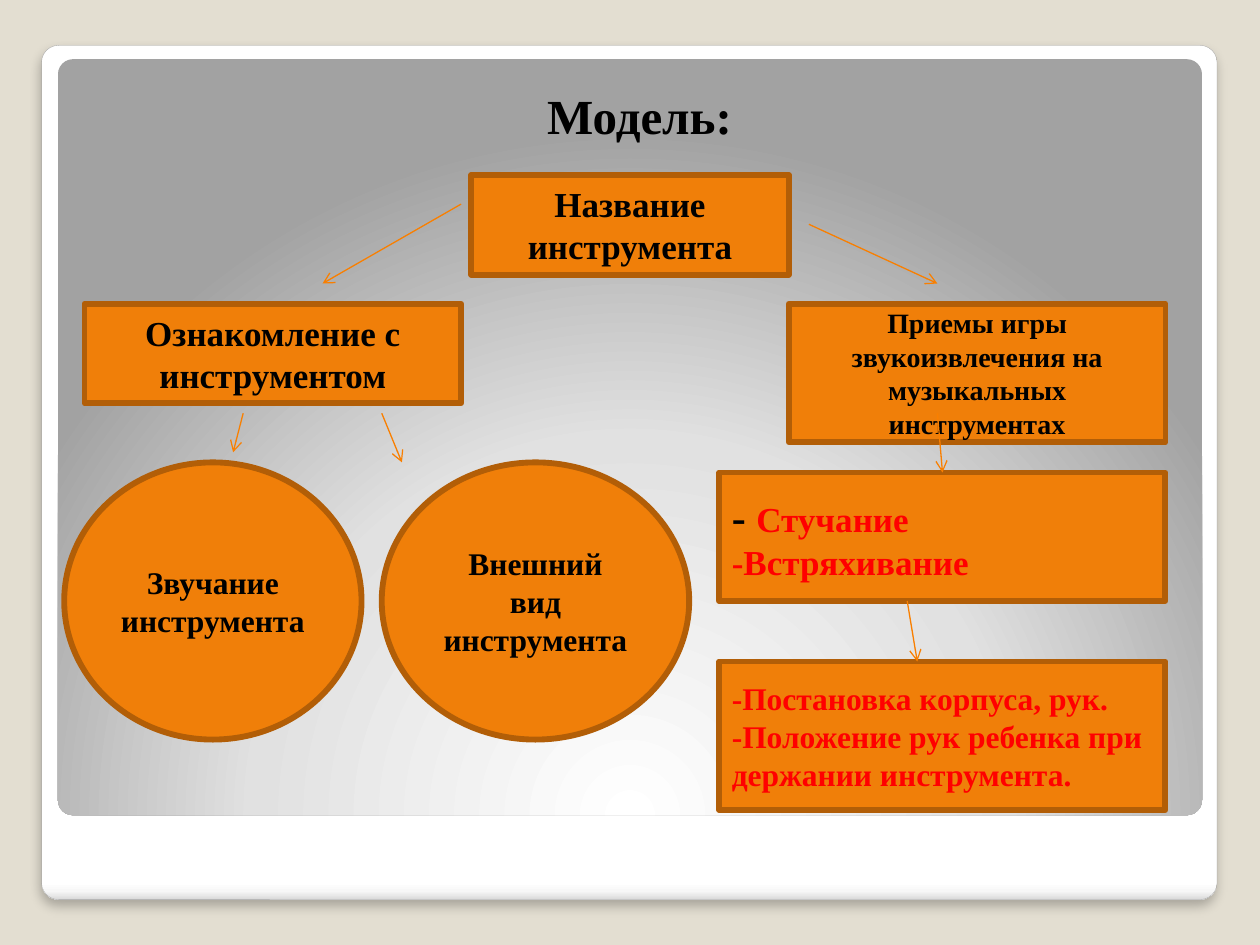
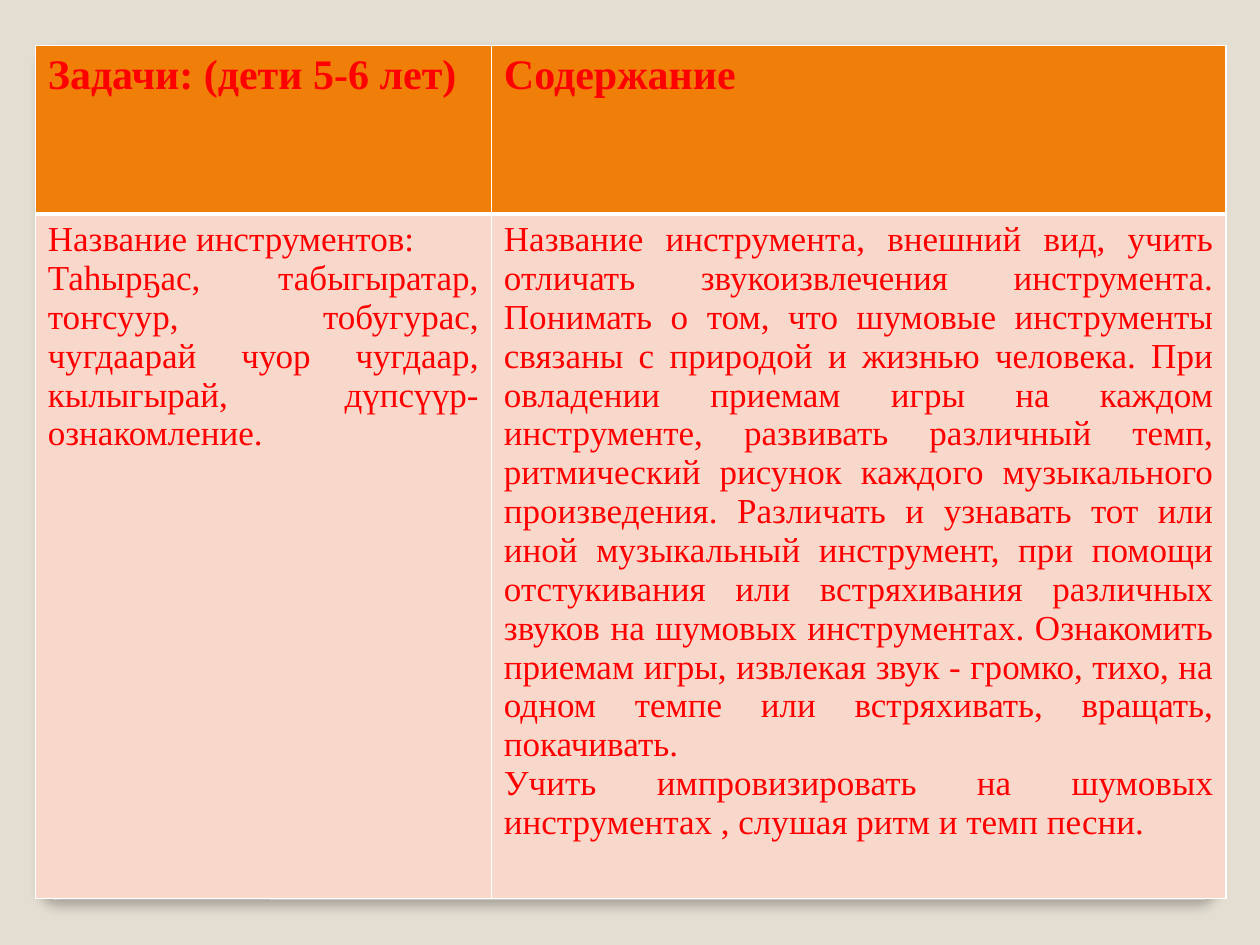
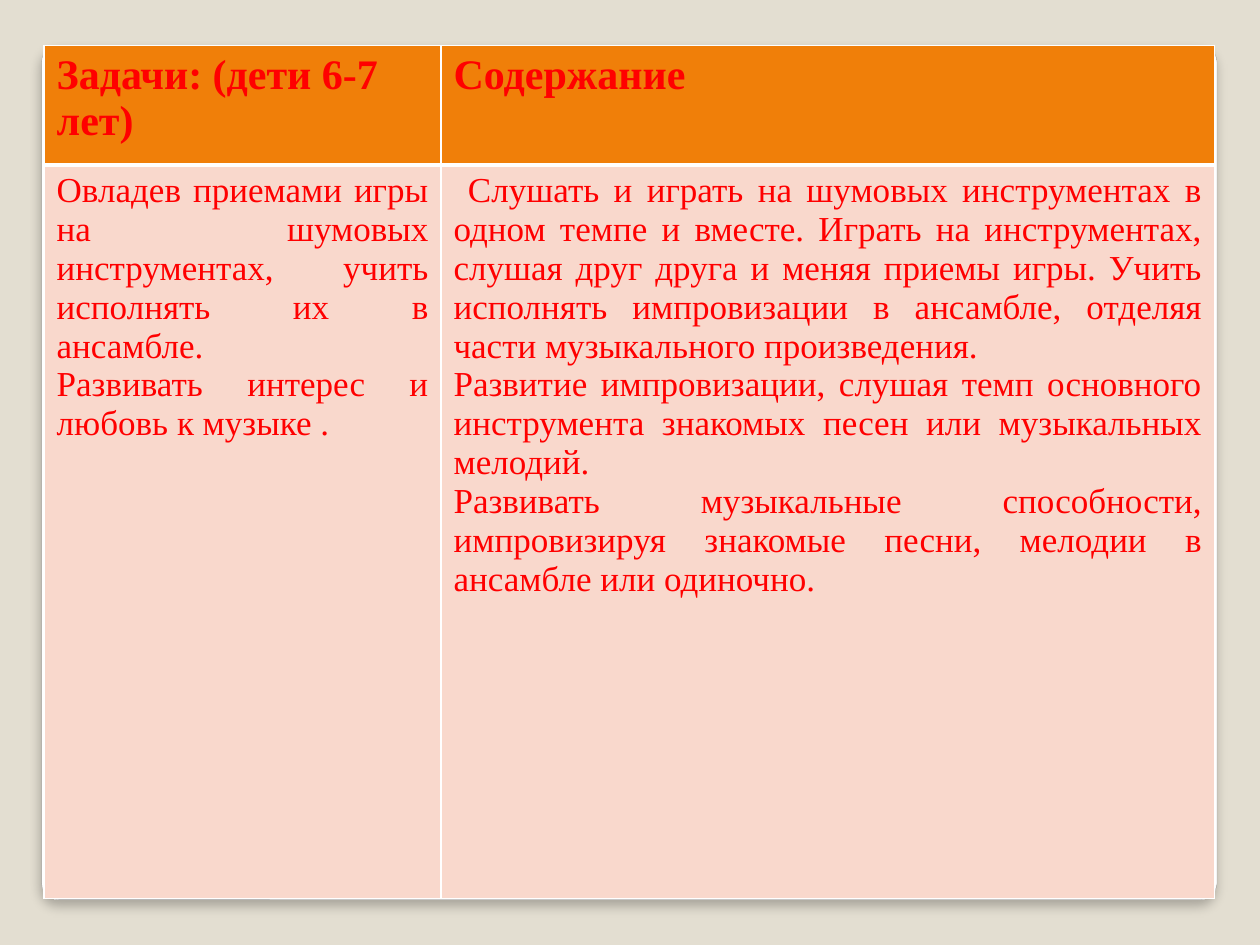
import pptx
import pptx.dml.color
import pptx.enum.shapes
import pptx.enum.text
import pptx.oxml
import pptx.oxml.ns
import pptx.util
from lxml import etree

Inches = pptx.util.Inches
Pt = pptx.util.Pt
qn = pptx.oxml.ns.qn
Shape = pptx.enum.shapes.MSO_SHAPE
Align = pptx.enum.text.PP_ALIGN
Anchor = pptx.enum.text.MSO_ANCHOR

FONT = "Times New Roman"
COLORS = {
    "background": "E3DED1",
    "orange": "F07F09",
    "outline": "B25E07",
    "arrow": "F97F00",
    "pink": "F9D8CC",
    "red": "FF0000",
    "black": "000000",
    "white": "FFFFFF",
    "frame_line": "A4A4A4",
}
FRAME_STOPS = [(0, "FFFFFF"), (98, "FFFFFF"), (99, "F7F7F7"), (100, "DADADA")]
PANEL_STOPS = [(0, "FFFFFF"), (55, "E1E1E1"), (100, "A2A2A2")]
FRAME_DIRECTION = '<a:lin ang="5400000" scaled="0"/>'
PANEL_DIRECTION = (
    '<a:path path="circle">'
    '<a:fillToRect l="50000" t="175000" r="50000" b="-75000"/></a:path>'
)

MODEL_TITLE = "Модель:"
MODEL_BOXES = {
    "name": (Shape.RECTANGLE, (3.74, 1.39, 2.52, 0.79), 20, "black", Align.CENTER,
             ["Название инструмента"]),
    "acquaintance": (Shape.RECTANGLE, (0.67, 2.41, 2.99, 0.79), 20, "black", Align.CENTER,
                     ["Ознакомление с инструментом"]),
    "techniques": (Shape.RECTANGLE, (6.26, 2.41, 2.99, 1.1), 16, "black", Align.CENTER,
                   ["Приемы игры звукоизвлечения на музыкальных инструментах"]),
    "sound": (Shape.OVAL, (0.51, 3.67, 2.36, 2.2), 18, "black", Align.CENTER,
              ["Звучание инструмента"]),
    "look": (Shape.OVAL, (3.03, 3.67, 2.44, 2.2), 18, "black", Align.CENTER,
             ["Внешний вид инструмента"]),
    "strokes": (Shape.RECTANGLE, (5.71, 3.75, 3.54, 1.02), 20, "red", Align.LEFT,
                [[("- ", 24, "black"), ("Стучание", 20, "red")], "-Встряхивание"]),
    "posture": (Shape.RECTANGLE, (5.71, 5.25, 3.54, 1.18), 18, "red", Align.LEFT,
                ["-Постановка корпуса, рук.",
                 "-Положение рук ребенка при держании инструмента."]),
}
MODEL_ARROWS = [
    ((3.66, 1.62), (2.56, 2.25), None),
    ((6.42, 1.78), (7.44, 2.25), None),
    ((1.93, 3.28), (1.85, 3.59), None),
    ((3.03, 3.28), (3.19, 3.67), None),
    ((7.2, 4.77), (7.28, 5.25), None),
    ((7.44, 3.28), (7.48, 3.75), "strokes"),
]

TASK_TABLES = [
    {
        "corner": (0.28, 0.36),
        "columns": (3.62, 5.83),
        "rows": (1.34, 5.43),
        "header": ["Задачи: (дети 5-6 лет)", "Содержание"],
        "header_align": Align.JUSTIFY,
        "body": [
            ["Название инструментов:",
             "Таһырҕас, табыгыратар, тоҥсуур, тобугурас, чугдаарай чуор чугдаар, "
             "кылыгырай, дүпсүүр-ознакомление."],
            ["Название инструмента, внешний вид, учить отличать звукоизвлечения "
             "инструмента. Понимать о том, что шумовые инструменты связаны с природой "
             "и жизнью человека. При овладении приемам игры на каждом инструменте, "
             "развивать различный темп, ритмический рисунок каждого музыкального "
             "произведения. Различать и узнавать тот или иной музыкальный инструмент, "
             "при помощи отстукивания или встряхивания различных звуков на шумовых "
             "инструментах. Ознакомить приемам игры, извлекая звук - громко, тихо, на "
             "одном темпе или встряхивать, вращать, покачивать.",
             "Учить импровизировать на шумовых инструментах , слушая ритм и темп песни."],
        ],
    },
    {
        "corner": (0.35, 0.36),
        "columns": (3.15, 6.14),
        "rows": (0.95, 5.82),
        "header": ["Задачи: (дети 6-7 лет)", "Содержание"],
        "header_align": Align.LEFT,
        "body": [
            ["Овладев приемами игры на шумовых инструментах, учить исполнять их в ансамбле.",
             "Развивать интерес и любовь к музыке ."],
            [" Слушать и играть на шумовых инструментах в одном темпе и вместе. Играть на "
             "инструментах, слушая друг друга и меняя приемы игры. Учить исполнять "
             "импровизации в ансамбле, отделяя части музыкального произведения.",
             "Развитие импровизации, слушая темп основного инструмента знакомых песен или "
             "музыкальных мелодий.",
             "Развивать музыкальные способности, импровизируя знакомые песни, мелодии в "
             "ансамбле или одиночно."],
        ],
    },
]


def color(name):
    return pptx.dml.color.RGBColor.from_string(COLORS[name])


def drawing_xml(tag, content):
    return pptx.oxml.parse_xml(
        f'<a:{tag} xmlns:a="http://schemas.openxmlformats.org/drawingml/2006/main">'
        f"{content}</a:{tag}>"
    )


def style_font(font, size, color_name, bold):
    font.name = FONT
    font.size = Pt(size)
    font.bold = bold
    font.color.rgb = color(color_name)


def write(frame, paragraphs, size, color_name, align, bold=True):
    frame.word_wrap = True
    for index, content in enumerate(paragraphs):
        para = frame.add_paragraph() if index else frame.paragraphs[0]
        para.alignment = align
        if isinstance(content, str):
            para.text = content
            style_font(para.font, size, color_name, bold)
            continue
        for text, span_size, span_color in content:
            span = para.add_run()
            span.text = text
            style_font(span.font, span_size, span_color, bold)


def add_plain_shape(page, kind, bounds):
    shape = page.shapes.add_shape(kind, *map(Inches, bounds))
    shape.shadow.inherit = False
    shape.fill.solid()
    return shape


def add_gradient_panel(page, bounds, stops, direction):
    panel = add_plain_shape(page, Shape.ROUNDED_RECTANGLE, bounds)
    panel.adjustments[0] = 0.02
    marks = "".join(
        f'<a:gs pos="{position * 1000}"><a:srgbClr val="{value}"/></a:gs>'
        for position, value in stops
    )
    properties = panel._element.spPr
    gradient = drawing_xml("gradFill", f"<a:gsLst>{marks}</a:gsLst>{direction}")
    properties.replace(properties.find(qn("a:solidFill")), gradient)
    panel.line.fill.background()
    return panel


def add_page(deck):
    page = deck.slides.add_slide(deck.slide_layouts[6])
    page.background.fill.solid()
    page.background.fill.fore_color.rgb = color("background")
    frame = add_gradient_panel(page, (0.33, 0.36, 9.33, 6.78), FRAME_STOPS, FRAME_DIRECTION)
    frame.line.color.rgb = color("frame_line")
    frame.line.width = Pt(0.16)
    shadow = drawing_xml("outerShdw", '<a:srgbClr val="000000"><a:alpha val="25000"/></a:srgbClr>')
    for key, value in (("blurRad", Pt(6)), ("dist", Pt(4)), ("dir", 5400000),
                       ("algn", "t"), ("rotWithShape", 0)):
        shadow.set(key, str(int(value)) if key != "algn" else value)
    frame._element.spPr.find(qn("a:effectLst")).append(shadow)
    add_gradient_panel(page, (0.46, 0.47, 9.08, 6), PANEL_STOPS, PANEL_DIRECTION)
    return page


def add_arrow(page, start, end, target):
    points = map(Inches, start + end)
    arrow = page.shapes.add_connector(pptx.enum.shapes.MSO_CONNECTOR.STRAIGHT, *points)
    if target is not None:
        arrow.end_connect(target, 0)
    arrow.line.color.rgb = color("arrow")
    arrow.line.width = Pt(0.75)
    etree.SubElement(arrow.line._get_or_add_ln(), qn("a:tailEnd"), type="arrow")
    etree.SubElement(arrow._element.spPr, qn("a:effectLst"))


def build_model(deck):
    page = add_page(deck)
    title = page.shapes.add_textbox(*map(Inches, (0.55, 0.58, 8.95, 0.7)))
    title.text_frame.margin_left = Inches(0.2)
    title.text_frame.margin_top = Inches(0.1)
    write(title.text_frame, [MODEL_TITLE], 28, "black", Align.CENTER)
    title.text_frame.paragraphs[0].space_before = Pt(2.5)

    boxes = {}
    for name, (kind, bounds, size, text_color, align, paragraphs) in MODEL_BOXES.items():
        box = add_plain_shape(page, kind, bounds)
        box.fill.fore_color.rgb = color("orange")
        box.line.color.rgb = color("outline")
        box.line.width = Pt(3.35)
        box.text_frame.vertical_anchor = Anchor.MIDDLE
        write(box.text_frame, paragraphs, size, text_color, align)
        boxes[name] = box
    for start, end, target in MODEL_ARROWS:
        add_arrow(page, start, end, boxes.get(target))


def style_cell(cell, fill, bottom_width):
    properties = cell._tc.get_or_add_tcPr()
    for side, width in (("L", 1), ("R", 1), ("T", 1), ("B", bottom_width)):
        border = drawing_xml(
            f"ln{side}", f'<a:solidFill><a:srgbClr val="{COLORS["white"]}"/></a:solidFill>'
        )
        border.set("w", str(int(Pt(width))))
        properties.append(border)
    cell.fill.solid()
    cell.fill.fore_color.rgb = color(fill)


def build_tasks(deck, tasks):
    page = add_page(deck)
    columns, rows = tasks["columns"], tasks["rows"]
    bounds = (*tasks["corner"], sum(columns), sum(rows))
    table = page.shapes.add_table(len(rows), len(columns), *map(Inches, bounds)).table
    for row, height in zip(table.rows, rows):
        row.height = Inches(height)
    for index, width in enumerate(columns):
        table.columns[index].width = Inches(width)
        header, body = table.cell(0, index), table.cell(1, index)
        style_cell(header, "orange", 3)
        style_cell(body, "pink", 1)
        body._tc.tcPr.remove(body._tc.tcPr.find(qn("a:lnT")))
        write(header.text_frame, [tasks["header"][index]], 24, "red", tasks["header_align"])
        write(body.text_frame, tasks["body"][index], 20, "red", Align.JUSTIFY, bold=False)


def main():
    deck = pptx.Presentation()
    deck.slide_width = Inches(10)
    deck.slide_height = Inches(7.5)
    build_model(deck)
    for tasks in TASK_TABLES:
        build_tasks(deck, tasks)
    deck.save("out.pptx")


if __name__ == "__main__":
    main()
